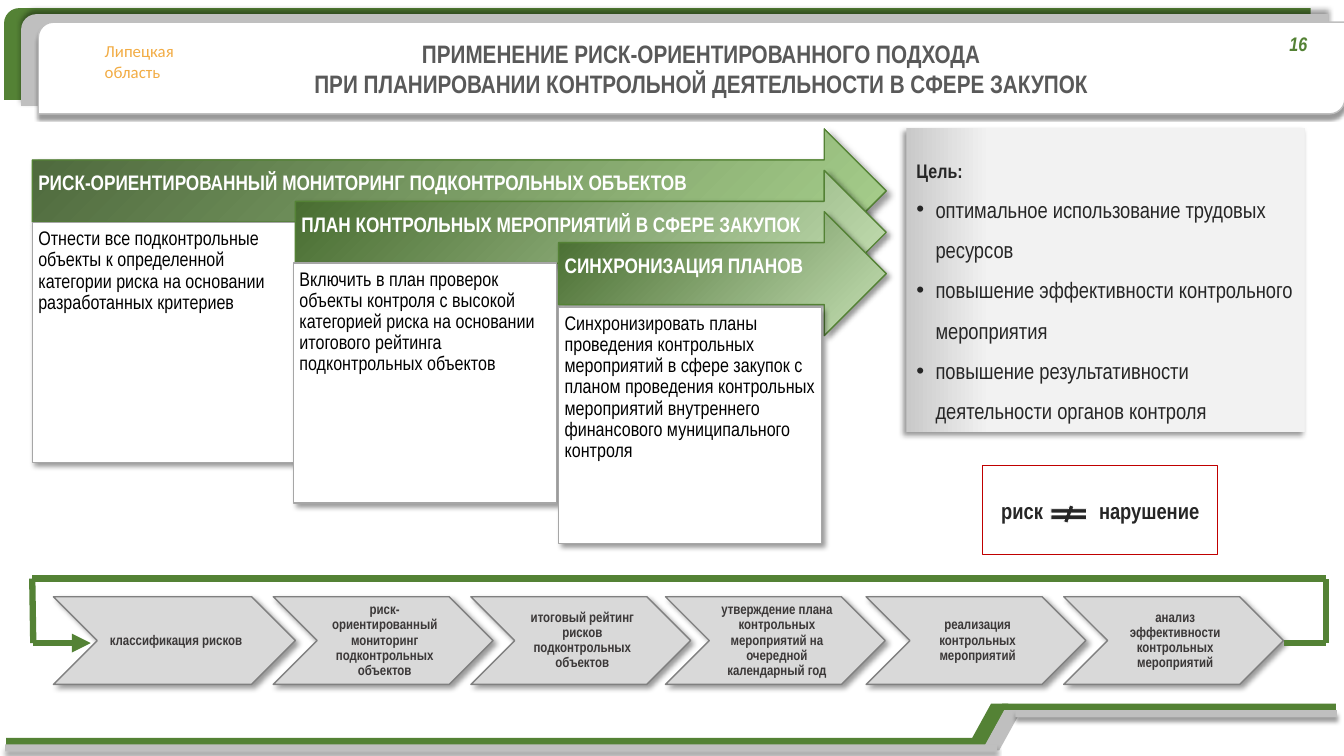
from dataclasses import dataclass
from itertools import pairwise

from lxml import etree
from pptx import Presentation
from pptx.dml.color import RGBColor
from pptx.enum.shapes import MSO_CONNECTOR, MSO_SHAPE
from pptx.enum.text import MSO_ANCHOR, PP_ALIGN
from pptx.oxml.ns import qn
from pptx.util import Inches, Pt

RECTANGLE = MSO_SHAPE.RECTANGLE
BANNER = MSO_SHAPE.ROUND_2_DIAG_RECTANGLE
ARROW = MSO_SHAPE.RIGHT_ARROW
CHEVRON = MSO_SHAPE.CHEVRON
NOT_EQUAL = MSO_SHAPE.MATH_NOT_EQUAL
STRAIGHT = MSO_CONNECTOR.STRAIGHT
LEFT, CENTER = PP_ALIGN.LEFT, PP_ALIGN.CENTER
TOP, MIDDLE = MSO_ANCHOR.TOP, MSO_ANCHOR.MIDDLE


@dataclass(frozen=True)
class Theme:
    green: str = "548235"
    silver: str = "BFBFBF"
    white: str = "FFFFFF"
    black: str = "000000"
    orange: str = "F2AC44"
    title: str = "595959"
    ink: str = "262626"
    step_ink: str = "3B3838"
    step_fill: str = "D9D9D9"
    step_line: str = "808080"
    card_line: str = "A6A6A6"
    red: str = "C00000"
    goal_dark: str = "C9C9C9"
    goal_light: str = "F2F2F2"
    first_arrow: tuple = ("A9D18E", "4C673B")
    next_arrow: tuple = ("C5E0B4", "43682B")
    font: str = "Arial Narrow"
    region_font: str = "Calibri"
    title_size: int = 18
    large: int = 16
    heading: int = 15
    body: int = 14
    region: int = 12
    step: int = 10


THEME = Theme()


def cells(count):
    """Length of a number of grid columns or rows, ten to the inch."""
    return Inches(count / 10)


def child(parent, tag, **attributes):
    element = etree.SubElement(parent, qn(tag))
    for name, value in attributes.items():
        element.set(name, str(value))
    return element


def write(shape, text, size=THEME.body, color=THEME.ink, bold=False, italic=False,
          font=THEME.font, align=LEFT, spacing=1.0, bullet=False, tab=None):
    """Add one formatted paragraph to a shape."""
    frame = shape.text_frame
    paragraph = frame.add_paragraph() if frame.text else frame.paragraphs[0]
    paragraph.alignment, paragraph.line_spacing = align, spacing
    properties = paragraph._p.get_or_add_pPr()
    if bullet:
        properties.set("marL", str(cells(1.9)))
        properties.set("indent", str(-cells(1.9)))
        child(properties, "a:buFont", typeface="Arial")
        child(properties, "a:buChar", char="•")
    if tab is not None:
        child(child(properties, "a:tabLst"), "a:tab", pos=cells(tab), algn="l")
    run = paragraph.add_run()
    run.text = text
    run.font.name, run.font.size = font, Pt(size)
    run.font.bold, run.font.italic = bold, italic
    run.font.color.rgb = RGBColor.from_string(color)


class SlideBuilder:
    def __init__(self, presentation, theme):
        self.theme = theme
        self.slide = presentation.slides.add_slide(presentation.slide_layouts[6])

    def style(self, shape, fill, line=None, width=1, shadow=None):
        shape.shadow.inherit = False
        if fill:
            shape.fill.solid()
            shape.fill.fore_color.rgb = RGBColor.from_string(fill)
        if line:
            shape.line.color.rgb = RGBColor.from_string(line)
            shape.line.width = Pt(width)
        else:
            shape.line.fill.background()
        if shadow:
            blur, distance, angle = shadow
            effects = shape._element.spPr.find(qn("a:effectLst"))
            outer = child(effects, "a:outerShdw", blurRad=Pt(blur), dist=Pt(distance),
                          dir=angle * 60000, algn="ctr", rotWithShape=0)
            child(child(outer, "a:srgbClr", val=self.theme.black), "a:alpha", val=40000)

    def frame(self, shape, insets=(1, 0.5, 1, 0.5), anchor=TOP, wrap=True):
        text_frame = shape.text_frame
        text_frame.word_wrap, text_frame.vertical_anchor = wrap, anchor
        (text_frame.margin_left, text_frame.margin_top,
         text_frame.margin_right, text_frame.margin_bottom) = map(cells, insets)

    def shape(self, kind, box, fill=None, insets=(1, 0.5, 1, 0.5), anchor=MIDDLE, **look):
        shape = self.slide.shapes.add_shape(kind, *map(cells, box))
        self.style(shape, fill, **look)
        self.frame(shape, insets, anchor)
        return shape

    def text_box(self, box, wrap=True):
        shape = self.slide.shapes.add_textbox(*map(cells, box))
        self.frame(shape, wrap=wrap)
        return shape

    def gradient(self, shape, stops, circular=False):
        fill = etree.Element(qn("a:gradFill"), rotWithShape="1")
        stop_list = child(fill, "a:gsLst")
        for position, color in stops:
            stop = child(stop_list, "a:gs", pos=position * 1000)
            child(stop, "a:srgbClr", val=color)
        if circular:
            child(child(fill, "a:path", path="circle"), "a:fillToRect", l=100000, t=100000)
        else:
            child(fill, "a:lin", ang=0, scaled=0)
        shape._element.spPr.find(qn("a:prstGeom")).addnext(fill)

    def polygon(self, points, fill):
        start, *others = [(cells(x), cells(y)) for x, y in points]
        builder = self.slide.shapes.build_freeform(*start)
        builder.add_line_segments(others, close=True)
        self.style(builder.convert_to_shape(), fill)

    def route(self, points, color, width):
        """Join points with straight lines; the last one ends in an arrowhead."""
        for start, end in pairwise(points):
            line = self.slide.shapes.add_connector(STRAIGHT, *map(cells, start + end))
            line.line.color.rgb = RGBColor.from_string(color)
            line.line.width = Pt(width)
            if end == points[-1]:
                child(line.line._get_or_add_ln(), "a:tailEnd", type="triangle")
            child(line._element.spPr, "a:effectLst")


REGION = ("Липецкая", "область")
TITLE = ("ПРИМЕНЕНИЕ РИСК-ОРИЕНТИРОВАННОГО ПОДХОДА",
         "ПРИ ПЛАНИРОВАНИИ КОНТРОЛЬНОЙ ДЕЯТЕЛЬНОСТИ В СФЕРЕ ЗАКУПОК")
GOALS = ("оптимальное использование трудовых ресурсов",
         "повышение эффективности контрольного мероприятия",
         "повышение результативности деятельности органов контроля")
# Arrow heading, card box, card text
STAGES = (
    ("РИСК-ОРИЕНТИРОВАННЫЙ МОНИТОРИНГ ПОДКОНТРОЛЬНЫХ ОБЪЕКТОВ", (3.2, 22.1, 26.1, 23.8),
     "Отнести все подконтрольные объекты к определенной категории риска на основании "
     "разработанных критериев"),
    ("ПЛАН КОНТРОЛЬНЫХ МЕРОПРИЯТИЙ В СФЕРЕ ЗАКУПОК", (29.1, 26.1, 26.1, 23.8),
     "Включить в план проверок объекты контроля с высокой категорией риска на основании "
     "итогового рейтинга подконтрольных объектов"),
    ("СИНХРОНИЗАЦИЯ ПЛАНОВ", (55.4, 30.5, 26.1, 23.4),
     "Синхронизировать планы проведения контрольных мероприятий в сфере закупок с планом "
     "проведения контрольных мероприятий внутреннего финансового муниципального контроля"),
)
# Left column, width, text
STEPS = (
    (5.3, 24, "классификация рисков"),
    (27.1, 21.8, "риск-ориентированный мониторинг подконтрольных объектов"),
    (46.7, 21.8, "итоговый рейтинг рисков подконтрольных объектов"),
    (66, 21.8, "утверждение плана контрольных мероприятий на очередной календарный год"),
    (85.9, 21.8, "реализация контрольных мероприятий"),
    (105.5, 21.8, "анализ эффективности контрольных мероприятий"),
)
LOOP = ((127.3, 63.8), (131.5, 63.8), (131.5, 57.4), (3.2, 57.4), (3.3, 63.8), (9, 63.8))


def main():
    presentation = Presentation()
    presentation.slide_width, presentation.slide_height = Inches(13.33), Inches(7.5)
    builder, theme = SlideBuilder(presentation, THEME), THEME
    soft = (4, 3, 45)

    # Header banners
    for left, top, fill, line, shadow in (
            (0.4, 0.8, theme.green, None, None),
            (2.1, 1.4, theme.silver, None, (4, 3, 270)),
            (3.8, 2.2, theme.white, theme.silver, (2, 3, 90))):
        builder.shape(BANNER, (left, top, 129.6, 9.1), fill, line=line, shadow=shadow)
    region = builder.text_box((9.4, 3.6, 9.1, 5))
    for line in REGION:
        write(region, line, size=theme.region, color=theme.orange, font=theme.region_font)

    # Footer ribbons
    for fill, shift, drop, low, high, shadow in (
            (theme.green, 0, 0, (0.6, 97.2), (99.4, 33.1), None),
            (theme.silver, 1.3, 0.65, (0.5, 98.4), (100.7, 31.9), (3, 3, 90))):
        slope = ((96.1, 73.8), (98.3, 69.8), (100, 69.8), (97.8, 73.8))
        builder.polygon([(x + shift, y + drop) for x, y in slope], fill)
        for (left, width), top in ((low, 73.2), (high, 69.8)):
            builder.shape(RECTANGLE, (left, top + drop, width, 0.7), fill, shadow=shadow)

    # Title and page number
    title = builder.text_box((18.3, 3.3, 102.5, 7.1))
    for line in TITLE:
        write(title, line, size=theme.title_size, color=theme.title, bold=True, align=CENTER)
    number = builder.text_box((126.9, 2.7, 3.8, 3.4), wrap=False)
    write(number, "16", color=theme.green, bold=True, italic=True)

    # Goal panel
    goal = builder.shape(RECTANGLE, (89.9, 12.7, 39.5, 30.2), insets=(1, 1.9, 1, 0.5),
                         anchor=TOP, shadow=(4, 3, 135))
    builder.gradient(goal, ((0, theme.goal_dark), (21, theme.goal_light)))
    write(goal, "Цель:", bold=True, spacing=1.5)
    for text in GOALS:
        write(goal, text, size=theme.large, spacing=1.5, bullet=True)

    # Process steps and return loop
    for left, width, text in STEPS:
        step = builder.shape(CHEVRON, (left, 59.2, width, 8.7), theme.step_fill,
                             insets=(0.4, 0.1, 0.1, 0.1), line=theme.step_line, shadow=soft)
        write(step, text, size=theme.step, color=theme.step_ink, bold=True,
              align=CENTER, spacing=0.9)
    builder.route(LOOP, theme.green, 4.5)

    # Staggered arrows with cards
    for index, (heading, card_box, text) in enumerate(STAGES):
        left, top = 3.2 + 26.1 * index, 12.8 + 4.1 * index
        arrow = builder.shape(ARROW, (left, top, 87.9 - left, 12.3),
                              insets=(0.6, 0.6, 2.8, 2), line=theme.green, shadow=soft)
        light, dark = theme.next_arrow if index else theme.first_arrow
        builder.gradient(arrow, ((0, light), (100, dark)), circular=True)
        write(arrow, heading, size=theme.heading, color=theme.white, bold=True, spacing=0.9)
        card = builder.shape(RECTANGLE, card_box, theme.white, insets=(0.6,) * 4,
                             anchor=TOP, line=theme.card_line, shadow=soft)
        write(card, text, color=theme.black, spacing=0.9)

    # Risk is not violation
    risk = builder.shape(RECTANGLE, (97.4, 46.2, 23.4, 8.8), theme.white,
                         insets=(1.9, 0.5, 1, 0.5), line=theme.red, width=0.75)
    write(risk, "риск\tнарушение", size=theme.large, bold=True, tab=9.7)
    builder.shape(NOT_EQUAL, (103.6, 50.1, 4.8, 1.8), theme.ink, line=theme.white, width=0.5)

    presentation.save("out.pptx")


if __name__ == "__main__":
    main()
